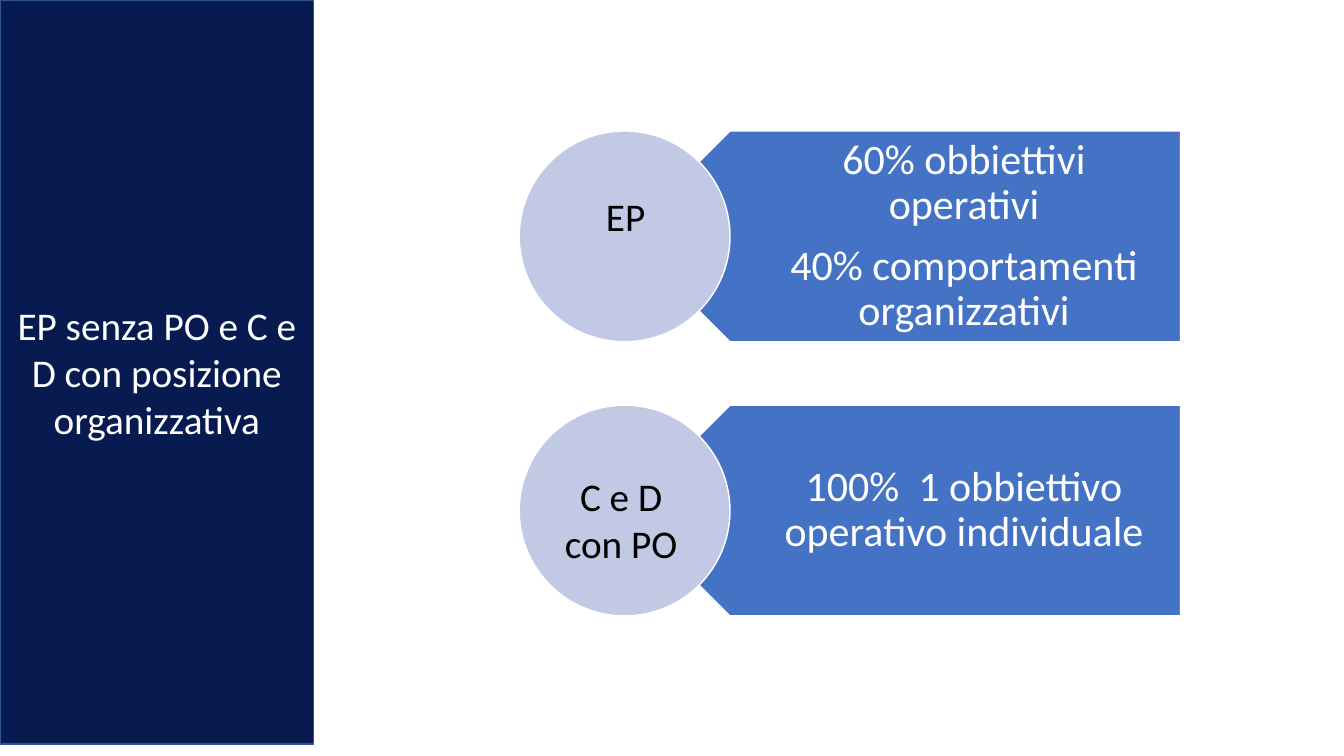
from pptx import Presentation
from pptx.dml.color import RGBColor
from pptx.enum.shapes import MSO_SHAPE
from pptx.enum.text import MSO_ANCHOR, PP_ALIGN
from pptx.util import Inches, Pt

RECTANGLE, OVAL = MSO_SHAPE.RECTANGLE, MSO_SHAPE.OVAL
TOP, MIDDLE = MSO_ANCHOR.TOP, MSO_ANCHOR.MIDDLE
CENTER = PP_ALIGN.CENTER

NAVY = RGBColor(0x07, 0x1B, 0x50)
NAVY_EDGE = RGBColor(0x32, 0x54, 0x91)
BLUE = RGBColor(0x44, 0x72, 0xC4)
LAVENDER = RGBColor(0xC1, 0xC9, 0xE4)
WHITE = RGBColor(0xFF, 0xFF, 0xFF)
BLACK = RGBColor(0x00, 0x00, 0x00)

FONT = "Calibri"
ROW_LEFT, ROW_TOP, ROW_PITCH = 5.15, 1.3, 2.72
ROW_WIDTH, ROW_HEIGHT = 6.56, 2.09

# Label boxes are left, top, width and height, measured from the row's corner
ROWS = [
    ("EP", (0.38, 0.56, 1.35, 0.57),
     ["60% obbiettivi operativi", "40% comportamenti organizzativi"]),
    ("C e D con PO", (0.3, 0.62, 1.42, 1.04),
     ["100%  1 obbiettivo operativo individuale"]),
]


def write_text(shape, lines, size=28, color=WHITE, anchor=MIDDLE,
               insets=(0.1, 0.05, 0.1, 0.05), line_spacing=None, space_after=None):
    frame = shape.text_frame
    frame.word_wrap = True
    frame.vertical_anchor = anchor
    (frame.margin_left, frame.margin_top,
     frame.margin_right, frame.margin_bottom) = map(Inches, insets)
    for index, line in enumerate(lines):
        paragraph = frame.add_paragraph() if index else frame.paragraphs[0]
        paragraph.alignment = CENTER
        paragraph.line_spacing = line_spacing
        paragraph.space_after = space_after
        run = paragraph.add_run()
        run.text = line
        run.font.name = FONT
        run.font.size = Pt(size)
        run.font.color.rgb = color


def paint(shape, fill, line):
    shape.shadow.inherit = False
    shape.fill.solid()
    shape.fill.fore_color.rgb = fill
    shape.line.color.rgb = line
    shape.line.width = Pt(1)


def add_sidebar(slide, left, top, width, height):
    sidebar = slide.shapes.add_shape(
        RECTANGLE, Inches(left), Inches(top), Inches(width), Inches(height))
    paint(sidebar, NAVY, NAVY_EDGE)
    write_text(sidebar, ["EP senza PO e C e D con posizione organizzativa"])


def add_row(slide, left, top, width, height, label, label_box, goals):
    """Draw a left-pointing banner whose tip lies under a labelled circle."""
    right, bottom = left + width, top + height
    tip, shoulder = left + height / 2, left + height
    builder = slide.shapes.build_freeform(Inches(right), Inches(bottom))
    corners = [(shoulder, bottom), (tip, top + height / 2), (shoulder, top), (right, top)]
    builder.add_line_segments([(Inches(x), Inches(y)) for x, y in corners], close=True)
    banner = builder.convert_to_shape()
    paint(banner, BLUE, WHITE)
    write_text(banner, goals, size=30, insets=(1.45, 0.13, 0.23, 0.13),
               line_spacing=0.9, space_after=Pt(10.5))

    circle = slide.shapes.add_shape(
        OVAL, Inches(left), Inches(top), Inches(height), Inches(height))
    paint(circle, LAVENDER, WHITE)

    label_left, label_top, label_width, label_height = label_box
    caption = slide.shapes.add_textbox(
        Inches(left + label_left), Inches(top + label_top),
        Inches(label_width), Inches(label_height))
    write_text(caption, [label], color=BLACK, anchor=TOP)


def main():
    presentation = Presentation()
    presentation.slide_width = Inches(13.33)
    presentation.slide_height = Inches(7.5)
    slide = presentation.slides.add_slide(presentation.slide_layouts[6])
    add_sidebar(slide, 0, 0, 3.11, 7.38)
    for index, (label, label_box, goals) in enumerate(ROWS):
        add_row(slide, ROW_LEFT, ROW_TOP + index * ROW_PITCH, ROW_WIDTH, ROW_HEIGHT,
                label, label_box, goals)
    presentation.save("out.pptx")


if __name__ == "__main__":
    main()
